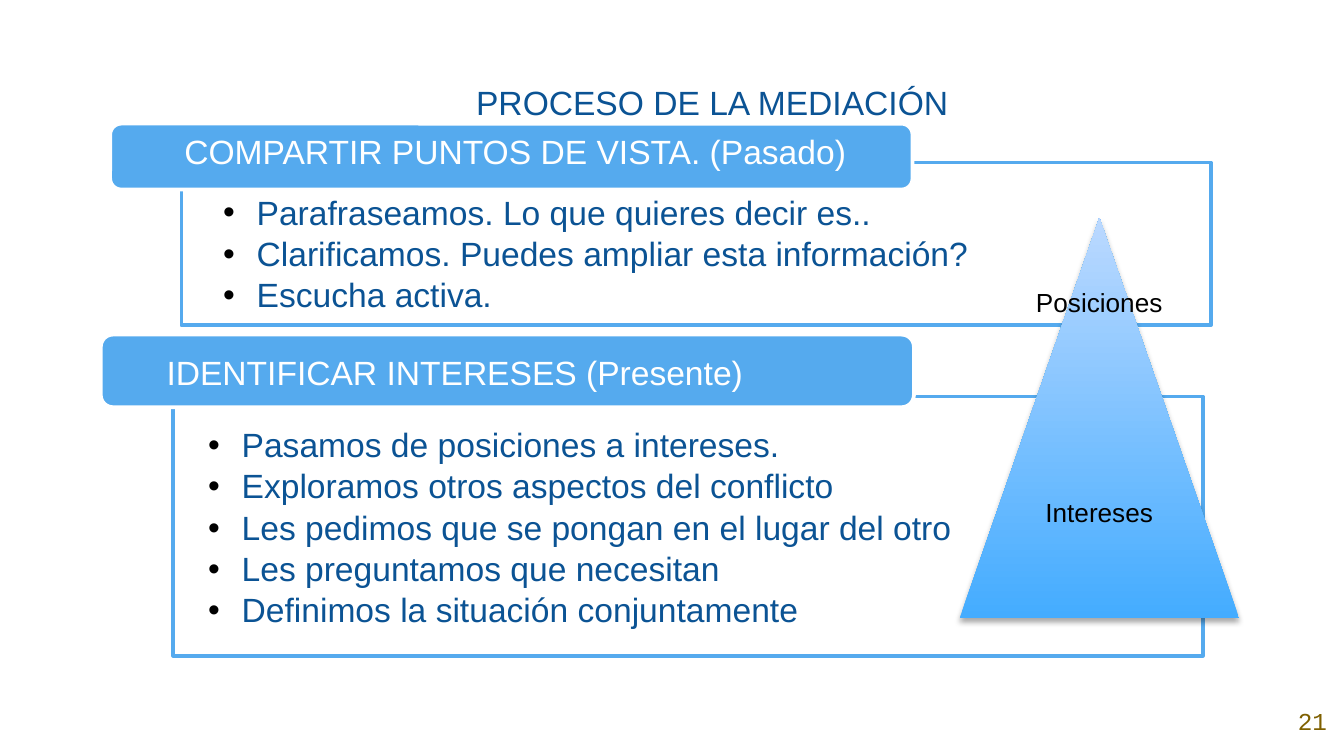
"""Build the slide on the mediation process."""
import pptx
import pptx.util
import pptx.dml.color
import pptx.enum.shapes
import pptx.enum.text
import pptx.oxml
import pptx.oxml.ns

Inches = pptx.util.Inches
Pt = pptx.util.Pt
SHAPE = pptx.enum.shapes.MSO_SHAPE
ANCHOR = pptx.enum.text.MSO_ANCHOR
ALIGN = pptx.enum.text.PP_ALIGN
NS = pptx.oxml.ns.nsdecls("a")
BLUE, NAVY, WHITE, BLACK = "55AAEE", "0B5394", "FFFFFF", "000000"

PAST = [
    "Parafraseamos. Lo que quieres decir es..",
    "Clarificamos. Puedes ampliar esta información?",
    "Escucha activa.",
]
PRESENT = [
    "Pasamos de posiciones a intereses.",
    "Exploramos otros aspectos del conflicto",
    "Les pedimos que se pongan en el lugar del otro",
    "Les preguntamos que necesitan",
    "Definimos la situación conjuntamente",
]


def color(code):
    return pptx.dml.color.RGBColor.from_string(code)


def add_xml(parent, xml):
    node = pptx.oxml.parse_xml(xml)
    parent.append(node)
    return node


def place(shape, box):
    shape.left, shape.top, shape.width, shape.height = map(Inches, box)


def set_frame(shape, pads, anchor):
    frame = shape.text_frame
    frame.word_wrap = True
    frame.auto_size = pptx.enum.text.MSO_AUTO_SIZE.NONE
    frame.vertical_anchor = anchor
    sides = map(Inches, pads)
    frame.margin_left, frame.margin_top, frame.margin_right, frame.margin_bottom = sides
    return frame


def add_run(para, text, size, code, face="Arial"):
    run = para.add_run()
    run.text = text
    run.font.size = Pt(size)
    run.font.name = face
    run.font.bold = False
    run.font.color.rgb = color(code)


def add_text(slide, box, text, size, code, align=ALIGN.LEFT, face="Arial",
             space=1, pads=(0.1, 0.05, 0.1, 0.05)):
    shape = slide.shapes.add_textbox(*map(Inches, box))
    para = set_frame(shape, pads, ANCHOR.MIDDLE).paragraphs[0]
    para.alignment = align
    para.line_spacing = space
    add_run(para, text, size, code, face)


def add_title(slide, box, text):
    title = slide.shapes.title
    place(title, box)
    para = set_frame(title, (0.1, 0.1, 0.1, 0.1), ANCHOR.TOP).paragraphs[0]
    para.alignment = ALIGN.CENTER
    para.line_spacing = 1.06
    props = para._p.get_or_add_pPr()
    props.set("marL", str(Inches(0.5)))
    props.set("indent", str(Inches(-0.25)))
    add_run(para, text, 18, NAVY)


def add_list(slide, box, items, pads):
    shape = slide.shapes.add_textbox(*map(Inches, box))
    frame = set_frame(shape, pads, ANCHOR.TOP)
    for num, item in enumerate(items):
        para = frame.add_paragraph() if num else frame.paragraphs[0]
        para.level = 1
        props = para._p.get_or_add_pPr()
        props.set("marL", str(Inches(0.25)))
        props.set("indent", str(Inches(-0.25)))
        add_xml(props, f'<a:buClr {NS}><a:srgbClr val="{BLACK}"/></a:buClr>')
        add_xml(props, f'<a:buFont {NS} typeface="Arial"/>')
        add_xml(props, f'<a:buChar {NS} char="•"/>')
        para.line_spacing = 0.9
        para.space_after = Pt(2.7)
        add_run(para, item, 18, NAVY)


def add_box(slide, kind, box, fill, line):
    shape = slide.shapes.add_shape(kind, *map(Inches, box))
    shape.shadow.inherit = False
    shape.fill.solid()
    shape.fill.fore_color.rgb = color(fill)
    shape.line.color.rgb = color(line)
    shape.line.width = Pt(2)
    return shape


def add_panel(slide, box):
    panel = add_box(slide, SHAPE.RECTANGLE, box, WHITE, BLUE)
    tone = panel._element.spPr.find(pptx.oxml.ns.qn("a:solidFill"))[0]
    add_xml(tone, f'<a:alpha {NS} val="90000"/>')


def add_head(slide, box, label, text):
    add_box(slide, SHAPE.ROUNDED_RECTANGLE, box, BLUE, WHITE)
    add_text(slide, label, text, 18, WHITE, ALIGN.CENTER, space=0.9,
             pads=(0.25, 0, 0.25, 0))


def add_peak(slide, box):
    peak = slide.shapes.add_shape(SHAPE.ISOSCELES_TRIANGLE, *map(Inches, box))
    peak.fill.gradient()
    peak.fill.gradient_angle = 90
    for stop, code in zip(peak.fill.gradient_stops, ("44ACFF", "BBD9FF")):
        stop.color.rgb = color(code)
    peak.line.fill.background()
    peak.shadow.inherit = False
    effects = peak._element.spPr.find(pptx.oxml.ns.qn("a:effectLst"))
    add_xml(effects, f'<a:outerShdw {NS} blurRad="{Pt(3.1)}" dist="{Pt(1.8)}" '
                     f'dir="5400000" rotWithShape="0"><a:srgbClr val="{BLACK}">'
                     '<a:alpha val="35000"/></a:srgbClr></a:outerShdw>')


def main():
    deck = pptx.Presentation()
    deck.slide_width, deck.slide_height = Inches(10), Inches(10 * 9 / 16)
    slide = deck.slides.add_slide(deck.slide_layouts[5])
    add_title(slide, (1.02, 0.49, 8.31, 0.57), "PROCESO DE LA MEDIACIÓN")
    add_panel(slide, (1.29, 2.95, 7.66, 1.93))
    add_text(slide, (9.53, 5.11, 0.47, 0.51), "21", 13, "7F6000",
             ALIGN.CENTER, "Courier New")
    add_panel(slide, (1.35, 1.21, 7.66, 1.21))
    add_list(slide, (0.93, 1, 8.51, 1.22), PAST, (0.73, 0.46, 0.73, 0.16))
    add_head(slide, (0.82, 0.92, 5.97, 0.49), (0.87, 1.01, 5.93, 0.26),
             "COMPARTIR PUNTOS DE VISTA. (Pasado)")
    add_head(slide, (0.75, 2.49, 6.05, 0.54), (0.09, 2.67, 6.59, 0.24),
             "IDENTIFICAR INTERESES (Presente)")
    add_list(slide, (1.45, 3.14, 7.27, 1.97), PRESENT, (0.1, 0.05, 0.1, 0.05))
    add_peak(slide, (7.14, 1.62, 2.08, 2.98))
    add_text(slide, (7.68, 3.64, 1.54, 0.34), "Intereses", 14, BLACK)
    add_text(slide, (7.61, 2.08, 1.54, 0.34), "Posiciones", 14, BLACK)
    deck.save("out.pptx")


if __name__ == "__main__":
    main()
